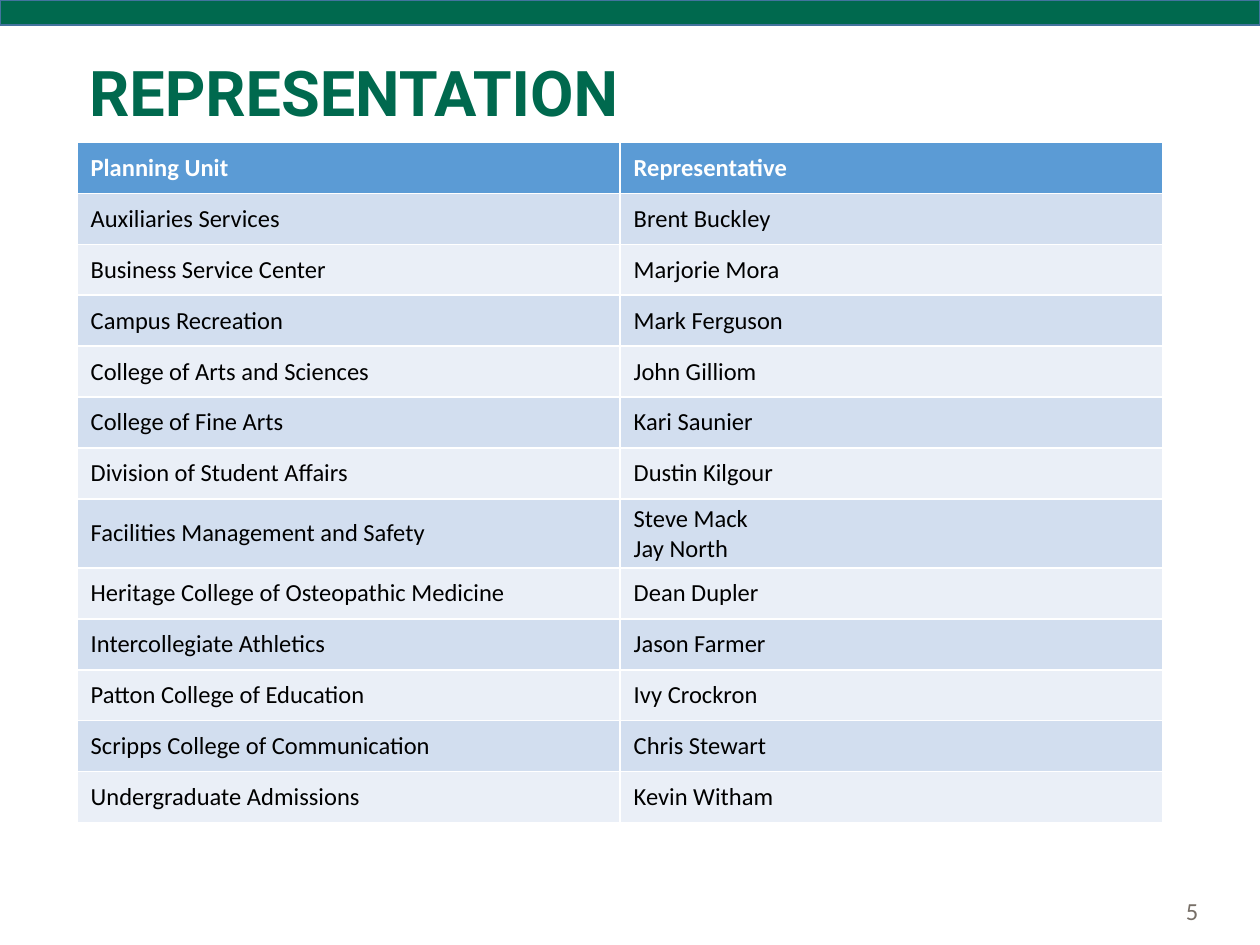
from pptx import Presentation
from pptx.dml.color import RGBColor
from pptx.enum.shapes import MSO_SHAPE
from pptx.enum.text import MSO_ANCHOR, PP_ALIGN
from pptx.util import Inches, Pt

RECT = MSO_SHAPE.RECTANGLE
MIDDLE = MSO_ANCHOR.MIDDLE
LEFT, RIGHT = PP_ALIGN.LEFT, PP_ALIGN.RIGHT

TITLE = "REPRESENTATION"
NUMBER = "5"
ROWS = [
    ("Planning Unit", "Representative"),
    ("Auxiliaries Services", "Brent Buckley"),
    ("Business Service Center", "Marjorie Mora"),
    ("Campus Recreation", "Mark Ferguson"),
    ("College of Arts and Sciences", "John Gilliom"),
    ("College of Fine Arts", "Kari Saunier"),
    ("Division of Student Affairs", "Dustin Kilgour"),
    ("Facilities Management and Safety", "Steve Mack\nJay North"),
    ("Heritage College of Osteopathic Medicine", "Dean Dupler"),
    ("Intercollegiate Athletics", "Jason Farmer"),
    ("Patton College of Education", "Ivy Crockron"),
    ("Scripps College of Communication", "Chris Stewart"),
    ("Undergraduate Admissions", "Kevin Witham"),
]
COLORS = {
    "green": "00694E", "edge": "43739E", "head": "5B9BD5", "odd": "D2DEEF",
    "even": "EAEFF7", "white": "FFFFFF", "black": "000000", "gray": "776F67",
}
WIDE, HIGH = 10, 7.5
EDGE, SPAN = 0.61, 8.62
TOP, DEEP = 1.13, 5.26
PAD_X, PAD_Y = 0.11, 0.04


def color(name):
    return RGBColor.from_string(COLORS[name])


def style(frame, face, size, tint, bold=False, align=LEFT):
    for para in frame.paragraphs:
        para.alignment = align
        font = para.font
        font.name, font.size, font.bold = face, Pt(size), bold
        font.color.rgb = color(tint)


def add_text(slide, text, area, *look):
    box = slide.shapes.add_textbox(*map(Inches, area))
    frame = box.text_frame
    frame.word_wrap = True
    frame.vertical_anchor = MIDDLE
    frame.text = text
    style(frame, *look)
    return frame


def add_bar(slide):
    bar = slide.shapes.add_shape(RECT, 0, 0, Inches(WIDE), Inches(0.2))
    bar.shadow.inherit = False
    bar.fill.solid()
    bar.fill.fore_color.rgb = color("green")
    bar.line.color.rgb = color("edge")
    bar.line.width = Pt(1)


def add_units(slide):
    """Add the table of planning units, with a header and banded rows."""
    area = map(Inches, (EDGE, TOP, SPAN, DEEP))
    table = slide.shapes.add_table(len(ROWS), len(ROWS[0]), *area).table
    for r, row in enumerate(ROWS):
        band = "odd" if r % 2 else "even" if r else "head"
        tint = "black" if r else "white"
        for c, text in enumerate(row):
            cell = table.cell(r, c)
            cell.fill.solid()
            cell.fill.fore_color.rgb = color(band)
            cell.vertical_anchor = MIDDLE
            cell.margin_left = cell.margin_right = Inches(PAD_X)
            cell.margin_top = cell.margin_bottom = Inches(PAD_Y)
            cell.text = text
            style(cell.text_frame, "Calibri", 14, tint, r == 0)


def main():
    deck = Presentation()
    deck.slide_width, deck.slide_height = Inches(WIDE), Inches(HIGH)
    slide = deck.slides.add_slide(deck.slide_layouts[6])
    add_bar(slide)
    title = add_text(slide, TITLE, (EDGE, 0.4, SPAN, 0.73),
                     "Roboto", 36, "green", True)
    title.paragraphs[0].line_spacing = 0.9
    add_units(slide)
    add_text(slide, NUMBER, (6.61, 7.03, 3, 0.4),
             "Calibri", 14, "gray", False, RIGHT)
    deck.save("out.pptx")


if __name__ == "__main__":
    main()
